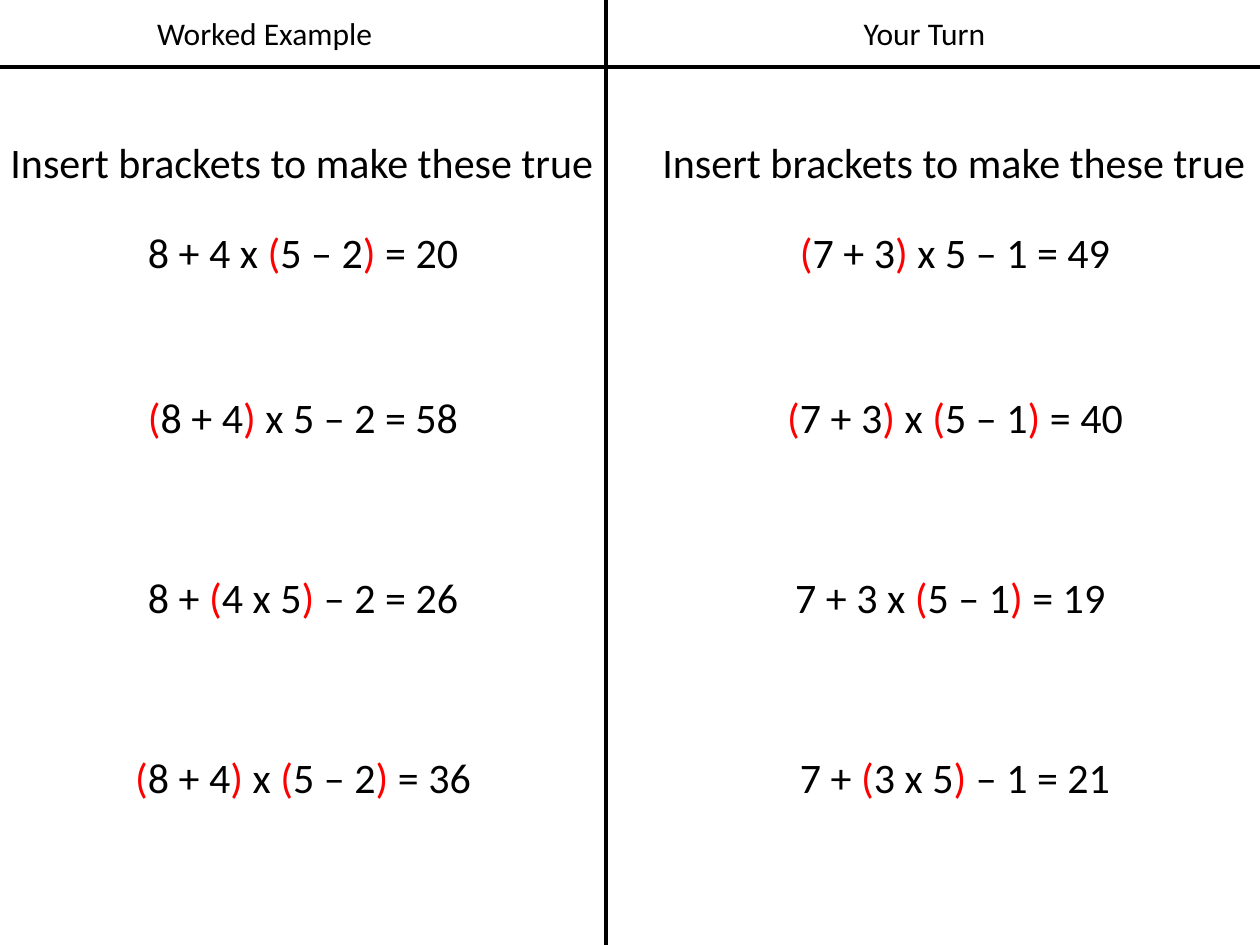
from dataclasses import dataclass
from itertools import groupby

from lxml.etree import SubElement
from pptx import Presentation
from pptx.dml.color import RGBColor
from pptx.enum.shapes import MSO_CONNECTOR as Connector
from pptx.enum.text import MSO_AUTO_SIZE as AutoSize, PP_ALIGN as Align
from pptx.oxml.ns import qn
from pptx.util import Emu, Pt

EMU_PER_PX = 914400 / 126
SLIDE_WIDTH, SLIDE_HEIGHT = 1260, 945
DIVIDER_X, RULE_Y = 606, 67
HEADING_TOP, HEADING_WIDTH, HEADING_HEIGHT = 8, 243, 50
EXERCISE_TOP, EXERCISE_WIDTH, EXERCISE_HEIGHT = 105, 610, 709
BLACK = RGBColor(0x00, 0x00, 0x00)
RED = RGBColor(0xFF, 0x00, 0x00)
INSTRUCTION = "Insert brackets to make these true"
EQUATION_GAPS = (0, 43.5, 51.5, 51.5)
HEADING_FONT = {"name": "Calibri", "size": Pt(18)}
EXERCISE_FONT = {"name": "Calibri", "size": Pt(24)}
EXERCISE_SPACING = {"line_spacing": 1.5, "space_after": Pt(8)}


@dataclass(frozen=True)
class Column:
    heading: str
    heading_left: int
    exercise_left: int
    equations: tuple[str, ...]


COLUMNS = (
    Column("Worked Example", 143, -2, (
        "8 + 4 x (5 – 2) = 20",
        "(8 + 4) x 5 – 2 = 58",
        "8 + (4 x 5) – 2 = 26",
        "(8 + 4) x (5 – 2) = 36",
    )),
    Column("Your Turn", 803, 650, (
        "(7 + 3) x 5 – 1 = 49",
        "(7 + 3) x (5 – 1) = 40",
        "7 + 3 x (5 – 1) = 19 ",
        "7 + (3 x 5) – 1 = 21",
    )),
)


def px(length: int) -> Emu:
    return Emu(round(length * EMU_PER_PX))


def apply(target, values: dict) -> None:
    for attribute, value in values.items():
        setattr(target, attribute, value)


def add_frame(slide, left: int, top: int, width: int, height: int):
    frame = slide.shapes.add_textbox(px(left), px(top), px(width), px(height)).text_frame
    apply(frame, {"word_wrap": True, "auto_size": AutoSize.SHAPE_TO_FIT_TEXT})
    return frame


def add_text(paragraph, text: str, font: dict) -> None:
    for is_bracket, letters in groupby(text, key=lambda letter: letter in "()"):
        run = paragraph.add_run()
        run.text = "".join(letters)
        apply(run.font, font)
        run.font.color.rgb = RED if is_bracket else BLACK


def draw_heading(slide, column: Column) -> None:
    frame = add_frame(slide, column.heading_left, HEADING_TOP, HEADING_WIDTH, HEADING_HEIGHT)
    heading = frame.paragraphs[0]
    heading.alignment = Align.CENTER
    add_text(heading, column.heading, HEADING_FONT)


def draw_exercise(slide, column: Column) -> None:
    frame = add_frame(slide, column.exercise_left, EXERCISE_TOP, EXERCISE_WIDTH, EXERCISE_HEIGHT)
    instruction = frame.paragraphs[0]
    apply(instruction, EXERCISE_SPACING | {"alignment": Align.LEFT})
    add_text(instruction, INSTRUCTION, EXERCISE_FONT)
    for text, gap in zip(column.equations, EQUATION_GAPS):
        equation = frame.add_paragraph()
        apply(equation, EXERCISE_SPACING | {"alignment": Align.CENTER, "space_before": Pt(gap)})
        add_text(equation, text, EXERCISE_FONT)


def draw_line(slide, start: tuple[int, int], end: tuple[int, int]) -> None:
    divider = slide.shapes.add_connector(Connector.STRAIGHT, *map(px, start + end))
    divider.line.color.rgb = BLACK
    divider.line.width = Pt(2.5)
    SubElement(divider._element.spPr, qn("a:effectLst"))


def main() -> None:
    """Build the bracket exercise with a worked example beside a practice column."""
    deck = Presentation()
    apply(deck, {"slide_width": px(SLIDE_WIDTH), "slide_height": px(SLIDE_HEIGHT)})
    slide = deck.slides.add_slide(deck.slide_layouts[6])
    for column in COLUMNS:
        draw_heading(slide, column)
    draw_line(slide, (DIVIDER_X, 0), (DIVIDER_X, SLIDE_HEIGHT))
    draw_line(slide, (0, RULE_Y), (SLIDE_WIDTH, RULE_Y))
    for column in COLUMNS:
        draw_exercise(slide, column)
    deck.save("out.pptx")


if __name__ == "__main__":
    main()
